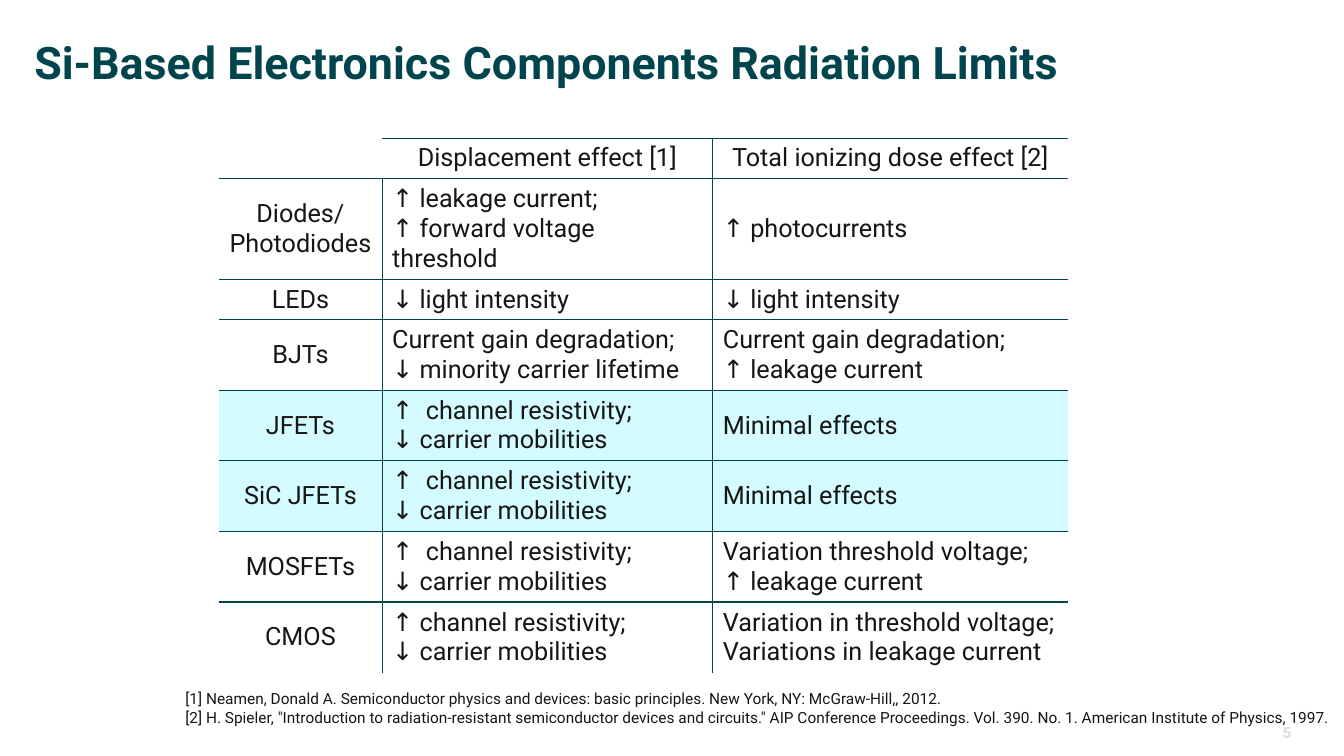
"""Builds a slide with a table of radiation effects on silicon components."""
import pptx
import pptx.dml.color
import pptx.enum.text
import pptx.oxml
import pptx.oxml.ns
import pptx.util

Inches = pptx.util.Inches
Pt = pptx.util.Pt
ALIGN = pptx.enum.text.PP_ALIGN
ANCHOR = pptx.enum.text.MSO_ANCHOR

TITLE = "Si-Based Electronics Components Radiation Limits"
PAGE_NUMBER = "5"
REFERENCES = [
    "[1] Neamen, Donald A. Semiconductor physics and devices: basic principles. "
    "New York, NY: McGraw-Hill,, 2012.",
    '[2] H. Spieler, "Introduction to radiation-resistant semiconductor devices and circuits." '
    "AIP Conference Proceedings. Vol. 390. No. 1. American Institute of Physics, 1997.",
]
EFFECTS = [
    ([""], ["Displacement effect [1]"], ["Total ionizing dose effect [2]"]),
    (["Diodes/", "Photodiodes"],
     ["↑ leakage current;", "↑ forward voltage threshold"],
     ["↑ photocurrents"]),
    (["LEDs"], ["↓ light intensity"], ["↓ light intensity"]),
    (["BJTs"],
     ["Current gain degradation;", "↓ minority carrier lifetime"],
     ["Current gain degradation;", "↑ leakage current"]),
    (["JFETs"],
     ["↑  channel resistivity;", "↓ carrier mobilities"],
     ["Minimal effects"]),
    (["SiC JFETs"],
     ["↑  channel resistivity;", "↓ carrier mobilities"],
     ["Minimal effects"]),
    (["MOSFETs"],
     ["↑  channel resistivity;", "↓ carrier mobilities"],
     ["Variation threshold voltage;", "↑ leakage current"]),
    (["CMOS"],
     ["↑ channel resistivity;", "↓ carrier mobilities"],
     ["Variation in threshold voltage;", "Variations in leakage current"]),
]
HIGHLIGHTED = {"JFETs", "SiC JFETs"}
COLUMN_WIDTHS = [1.62, 3.28, 3.52]
LINE_HEIGHT, ROW_PADDING = 0.27, 0.1

THEME = {
    "accent": "00454D",
    "highlight": "D4FBFF",
    "rule": 1,
    "title": {"name": "Roboto", "size": Pt(32), "bold": True, "color": "00454D"},
    "body": {"name": "Roboto", "size": Pt(18), "bold": False, "color": "161616"},
    "reference": {"name": "Roboto", "size": Pt(11), "bold": False, "color": "161616"},
    "number": {"name": "Roboto", "size": Pt(11), "bold": True, "color": "DBDCDB"},
}


def write(frame, lines, style, align=ALIGN.LEFT, spacing=1.0):
    for index, line in enumerate(lines):
        paragraph = frame.paragraphs[0] if index == 0 else frame.add_paragraph()
        paragraph.text = line
        paragraph.alignment = align
        paragraph.line_spacing = spacing
        for key, value in THEME[style].items():
            if key == "color":
                paragraph.font.color.rgb = pptx.dml.color.RGBColor.from_string(value)
            else:
                setattr(paragraph.font, key, value)


def add_text(slide, box, lines, style, margins=None, **layout):
    frame = slide.shapes.add_textbox(*map(Inches, box)).text_frame
    settings = {"word_wrap": True, "vertical_anchor": ANCHOR.TOP}
    if margins is not None:
        sides = ("left", "right", "top", "bottom")
        settings.update({f"margin_{side}": Inches(margins) for side in sides})
    for key, value in settings.items():
        setattr(frame, key, value)
    write(frame, lines, style, **layout)


def set_borders(cell, ruled_sides):
    properties = cell._tc.get_or_add_tcPr()
    namespace = pptx.oxml.ns.nsdecls("a")
    for side in "LRTB":
        ruled = side in ruled_sides
        paint = (f'<a:solidFill><a:srgbClr val="{THEME["accent"]}"/></a:solidFill>'
                 if ruled else "<a:noFill/>")
        properties.append(pptx.oxml.parse_xml(
            f'<a:ln{side} {namespace} w="{Pt(THEME["rule"])}">{paint}</a:ln{side}>'))


def ruled_sides(row, column):
    last_row, last_column = len(EFFECTS) - 1, len(COLUMN_WIDTHS) - 1
    corner_edge = row == 0 and column <= 1
    sides = {
        "L": column > 0 and not corner_edge,
        "R": column < last_column and not (row == 0 and column == 0),
        "T": row > 0 or column > 0,
        "B": row < last_row,
    }
    return {side for side, ruled in sides.items() if ruled}


def add_effects_table(slide, left, top):
    heights = [ROW_PADDING + LINE_HEIGHT * max(map(len, row)) for row in EFFECTS]
    table = slide.shapes.add_table(
        len(EFFECTS), len(COLUMN_WIDTHS), Inches(left), Inches(top),
        Inches(sum(COLUMN_WIDTHS)), Inches(sum(heights))).table
    table.first_row = table.horz_banding = False
    for column, width in zip(table.columns, COLUMN_WIDTHS):
        column.width = Inches(width)
    for row_index, (component, *effects) in enumerate(EFFECTS):
        table.rows[row_index].height = Inches(heights[row_index])
        for column_index, lines in enumerate([component, *effects]):
            cell = table.cell(row_index, column_index)
            centred = row_index == 0 or column_index == 0
            write(cell.text_frame, lines, "body", ALIGN.CENTER if centred else ALIGN.LEFT)
            cell.vertical_anchor = ANCHOR.MIDDLE
            set_borders(cell, ruled_sides(row_index, column_index))
            if component[0] in HIGHLIGHTED:
                cell.fill.solid()
                cell.fill.fore_color.rgb = pptx.dml.color.RGBColor.from_string(
                    THEME["highlight"])
            else:
                cell.fill.background()


def main():
    presentation = pptx.Presentation()
    presentation.slide_width = Inches(13.33)
    presentation.slide_height = Inches(7.5)
    slide = presentation.slides.add_slide(presentation.slide_layouts[6])
    add_text(slide, (12.61, 7.19, 0.31, 0.17), [PAGE_NUMBER], "number", margins=0,
             align=ALIGN.CENTER, spacing=0.9)
    add_text(slide, (0.34, 0.4, 12.57, 0.97), [TITLE], "title", margins=0, spacing=0.9)
    add_effects_table(slide, 2.17, 1.37)
    add_text(slide, (1.74, 6.79, 11.59, 0.66), REFERENCES, "reference")
    presentation.save("out.pptx")


if __name__ == "__main__":
    main()
